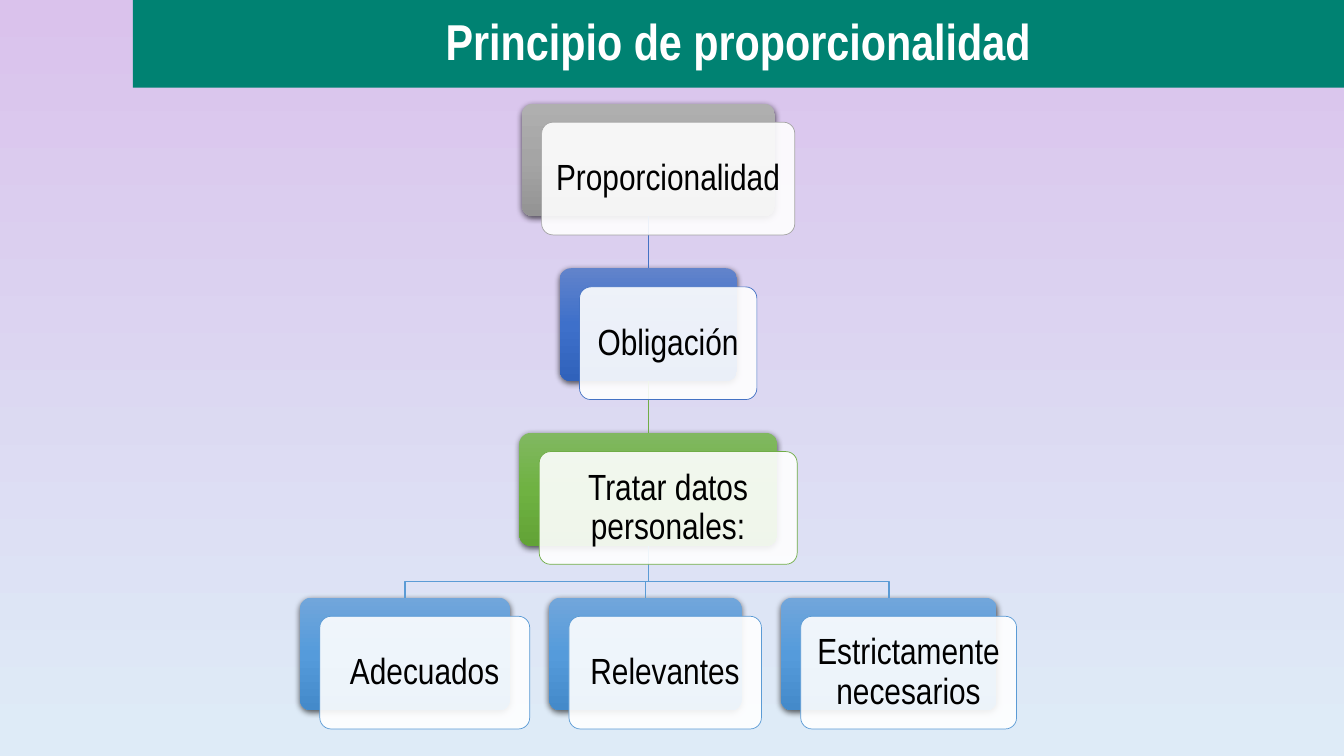
from lxml import etree
from pptx import Presentation
from pptx.dml.color import RGBColor
from pptx.enum import shapes, text
from pptx.oxml.ns import qn
from pptx.util import Cm, Pt

FONT = "Arial Narrow"
COLORS = {
    "banner": "008272", "white": "FFFFFF", "black": "000000",
    "gray": "A5A5A5", "blue": "4472C4", "green": "70AD47", "sky": "5B9BD5",
}
GRADIENTS = {
    "page": [(0, "DAC2EC"), (98, "DEEBF7")],
    "gray": [(0, "AFAFAF"), (50, "A5A5A5"), (100, "939393")],
    "blue": [(0, "6183CB"), (50, "3E70CA"), (100, "3062BB")],
    "green": [(0, "81B861"), (50, "6FB242"), (100, "62A336")],
    "sky": [(0, "71A6DB"), (50, "559BDB"), (100, "448ACA")],
}

# Diagram grid, in centimetres
CENTER, TOP, ROW_STEP, CARD_HEIGHT = 16.34, 2.61, 4.15, 2.84
SHIFT_X, SHIFT_Y = 0.5, 0.47
LEAF_LEFT, LEAF_GAP, BUS_Y = 7.56, 0.99, 14.66

CHAIN = [("Proporcionalidad", 6.38, "gray"), ("Obligación", 4.47, "blue"),
         ("Tratar datos personales:", 6.5, "green")]
LEAVES = [("Adecuados", 5.29), ("Relevantes", 4.85),
          ("Estrictamente necesarios", 5.44)]


def color(name):
    return RGBColor.from_string(COLORS[name])


def add_node(parent, tag, **attributes):
    return etree.SubElement(parent, qn(tag), attributes)


def paint_gradient(fill, element, stops):
    """Fill from top to bottom with any number of (percent, hex) stops."""
    fill.gradient()
    fill.gradient_angle = 270
    stop_list = element.find(".//" + qn("a:gsLst"))
    for stop in list(stop_list):
        stop_list.remove(stop)
    for percent, value in stops:
        stop = add_node(stop_list, "a:gs", pos=str(percent * 1000))
        add_node(stop, "a:srgbClr", val=value)


def write(box, words, size, ink, bold=False, inset=0.27, after=0):
    frame = box.text_frame
    frame.word_wrap = True
    frame.auto_size = text.MSO_AUTO_SIZE.NONE
    frame.vertical_anchor = text.MSO_ANCHOR.MIDDLE
    frame.margin_left = frame.margin_right = Cm(inset)
    frame.margin_top = frame.margin_bottom = Cm(inset)
    para = frame.paragraphs[0]
    para.alignment = text.PP_ALIGN.CENTER
    para.line_spacing = 0.9
    para.space_after = Pt(after)
    span = para.add_run()
    span.text = words
    span.font.name, span.font.size, span.font.bold = FONT, Pt(size), bold
    span.font.color.rgb = color(ink)


def add_rounded(page, left, top, width):
    box = page.shapes.add_shape(shapes.MSO_SHAPE.ROUNDED_RECTANGLE,
                                Cm(left), Cm(top), Cm(width), Cm(CARD_HEIGHT))
    box.adjustments[0] = 0.1
    box.shadow.inherit = False
    return box


def add_back(page, left, top, width, tone):
    box = add_rounded(page, left, top, width)
    paint_gradient(box.fill, box.element, GRADIENTS[tone])
    box.line.fill.background()
    effects = box.element.find(".//" + qn("a:effectLst"))
    shadow = add_node(effects, "a:outerShdw", blurRad=str(Pt(4.5)),
                      dist=str(Pt(1.5)), dir="5400000", rotWithShape="0")
    shade = add_node(shadow, "a:srgbClr", val=COLORS["black"])
    add_node(shade, "a:alpha", val="63000")
    return box


def add_front(page, left, top, width, tone, words):
    box = add_rounded(page, left + SHIFT_X, top + SHIFT_Y, width)
    box.fill.solid()
    box.fill.fore_color.rgb = color("white")
    white = box.element.spPr.find(qn("a:solidFill") + "/" + qn("a:srgbClr"))
    add_node(white, "a:alpha", val="90000")
    box.line.color.rgb = color(tone)
    box.line.width = Pt(0.5)
    write(box, words, 26, "black")


def add_link(page, upper, lower, tone):
    link = page.shapes.add_connector(shapes.MSO_CONNECTOR.STRAIGHT, 0, 0, 0, 0)
    link.begin_connect(upper, 2)
    link.end_connect(lower, 0)
    link.line.color.rgb = color(tone)
    link.line.width = Pt(1)
    add_node(link.element.spPr, "a:effectLst")


def add_branch(page, parent, leaf, tone):
    start_x = parent.left + parent.width // 2
    end_x = leaf.left + leaf.width // 2
    builder = page.shapes.build_freeform(start_x, parent.top + parent.height)
    builder.add_line_segments([(start_x, Cm(BUS_Y)), (end_x, Cm(BUS_Y)),
                               (end_x, leaf.top)], close=False)
    branch = builder.convert_to_shape()
    branch.fill.background()
    branch.line.color.rgb = color(tone)
    branch.line.width = Pt(1)
    branch.shadow.inherit = False


def add_title(page, words):
    title = page.shapes.title
    title.left, title.top = Cm(3.35), Cm(0)
    title.width, title.height = Cm(30.52), Cm(2.21)
    title.fill.solid()
    title.fill.fore_color.rgb = color("banner")
    write(title, words, 36, "white", bold=True, inset=0.13)


def place_cards():
    """Return left, top, width, tone and words of each card."""
    cards = [(CENTER - width / 2, TOP + row * ROW_STEP, width, tone, words)
             for row, (words, width, tone) in enumerate(CHAIN)]
    left = LEAF_LEFT
    for words, width in LEAVES:
        cards.append((left, TOP + len(CHAIN) * ROW_STEP, width, "sky", words))
        left += width + LEAF_GAP
    return cards


def main():
    deck = Presentation()
    deck.slide_width, deck.slide_height = Cm(33.87), Cm(19.05)
    page = deck.slides.add_slide(deck.slide_layouts[5])
    paint_gradient(page.background.fill, page.element, GRADIENTS["page"])
    add_title(page, "Principio de proporcionalidad")

    # Coloured backs, then lines, then white fronts that cover the line ends
    cards = place_cards()
    backs = [add_back(page, *card[:4]) for card in cards]
    chain, leaves = backs[:len(CHAIN)], backs[len(CHAIN):]
    for upper, lower, (_, _, tone) in zip(chain, chain[1:], CHAIN[1:]):
        add_link(page, upper, lower, tone)
    for leaf in leaves:
        add_branch(page, chain[-1], leaf, "sky")
    for card in cards:
        add_front(page, *card)

    deck.save("out.pptx")


if __name__ == "__main__":
    main()
